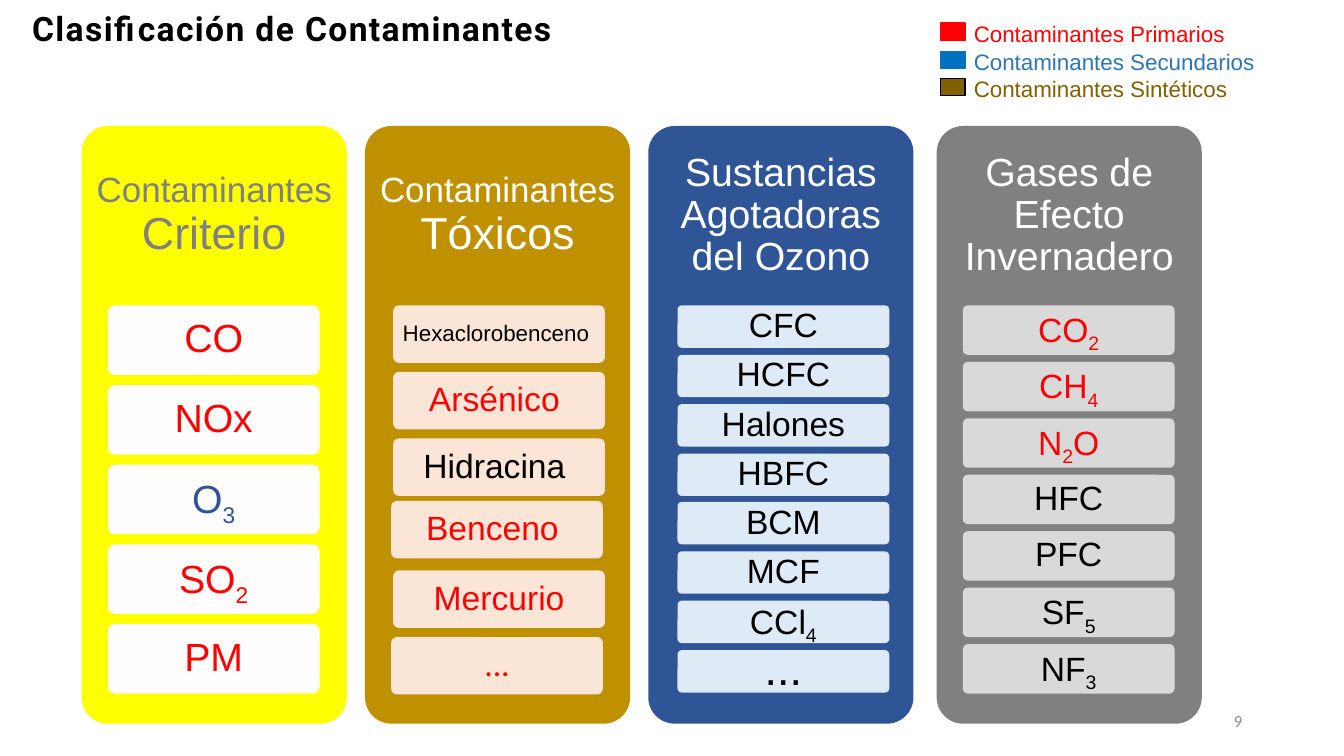
import dataclasses

import pptx
import pptx.dml.color
import pptx.enum.shapes
import pptx.enum.text
import pptx.util

PX = 9144
SHAPE = pptx.enum.shapes.MSO_SHAPE
ALIGN = pptx.enum.text.PP_ALIGN
ANCHOR = pptx.enum.text.MSO_ANCHOR


@dataclasses.dataclass(frozen=True)
class Theme:
    """Colours, fonts and type sizes of the slide."""
    body: str = "Arial"
    title: str = "Roboto"
    plain: str = "Calibri"
    red: str = "FF0000"
    black: str = "000000"
    white: str = "FFFFFF"
    grey: str = "808080"
    blue: str = "2F5597"
    page: str = "8C8C8C"
    small: int = 12
    legend: int = 16
    item: int = 24
    kind: int = 25
    large: int = 28
    huge: int = 32


T = Theme()


@dataclasses.dataclass(frozen=True)
class Item:
    """One pill: text with _ before each subscript, and its exceptions."""
    text: str
    color: str = T.black
    size: int = 0
    font: str = T.body
    dx: int = 0
    dy: int = 0


@dataclasses.dataclass(frozen=True)
class Column:
    """One panel: place, colours, heading runs and pills."""
    x: int
    fill: str
    head_color: str
    head: tuple
    indent: int
    pill_h: int
    last_y: int
    pill_fill: str
    size: int
    items: tuple


LEGEND = (
    ("Contaminantes Primarios", T.red, T.red, T.red),
    ("Contaminantes Secundarios", "2E75B6", "0070C0", "0070C0"),
    ("Contaminantes Sintéticos", "806000", "806000", T.black),
)

COLUMNS = (
    Column(81, "FFFF00", T.grey, (("Contaminantes ", T.kind), ("Criterio", T.huge)),
           26, 69, 619, "FFFDFD", T.large,
           (Item("CO", T.red), Item("NOx", T.red), Item("O_3", T.blue),
            Item("SO_2", T.red), Item("PM", T.red))),
    Column(362, "BF9000", T.white, (("Contaminantes ", T.kind), ("Tóxicos", T.huge)),
           28, 57, 632, "FBE5D6", T.item,
           (Item("Hexaclorobenceno ", size=T.legend), Item("Arsénico ", T.red),
            Item("Hidracina "), Item("Benceno ", T.red, dx=-2, dy=-3),
            Item("Mercurio", T.red), Item("...", T.red, font=T.plain, dx=-2))),
    Column(643, T.blue, T.white, (("Sustancias Agotadoras del Ozono", T.large),),
           29, 42, 645, "DEEBF7", T.item,
           (Item("CFC"), Item("HCFC"), Item("Halones"), Item("HBFC"),
            Item("BCM"), Item("MCF"), Item("CCl_4"), Item("...", size=T.huge))),
    Column(929, T.grey, T.white, (("Gases de Efecto Invernadero", T.large),),
           26, 49, 639, "D9D9D9", T.item,
           (Item("CO_2", T.red), Item("CH_4", T.red), Item("N_2O", T.red),
            Item("HFC"), Item("PFC"), Item("SF_5"), Item("NF_3"))),
)


def rgb(color):
    """Return a colour object."""
    return pptx.dml.color.RGBColor.from_string(color)


def emu(*lengths):
    """Turn px into EMU."""
    return [n * PX for n in lengths]


def style(p, font, size, color, align=ALIGN.LEFT):
    """Set the font and alignment of a paragraph."""
    p.alignment = align
    p.font.name = font
    p.font.size = pptx.util.Pt(size)
    p.font.color.rgb = rgb(color)


def frame(sp, inset_x=10, inset_y=5, anchor=ANCHOR.MIDDLE):
    """Set up a text frame and return its first paragraph."""
    tf = sp.text_frame
    tf.word_wrap = True
    tf.vertical_anchor = anchor
    tf.margin_left, tf.margin_right = emu(inset_x, inset_x)
    tf.margin_top, tf.margin_bottom = emu(inset_y, inset_y)
    return tf.paragraphs[0]


def add_box(s, kind, box, fill, line=None):
    """Add a flat filled shape."""
    sp = s.shapes.add_shape(kind, *emu(*box))
    sp.shadow.inherit = False
    sp.fill.solid()
    sp.fill.fore_color.rgb = rgb(fill)
    if line:
        sp.line.color.rgb = rgb(line)
        sp.line.width = pptx.util.Pt(1)
    else:
        sp.line.fill.background()
    if kind == SHAPE.ROUNDED_RECTANGLE:
        sp.adjustments[0] = 0.1
    return sp


def add_label(s, box, text, font, size, color, align=ALIGN.LEFT, anchor=ANCHOR.MIDDLE):
    """Add a one-line text box and return its paragraph."""
    p = frame(s.shapes.add_textbox(*emu(*box)), anchor=anchor)
    p.add_run().text = text
    style(p, font, size, color, align)
    return p


def add_title(s, box):
    """Add the spaced bold title."""
    p = add_label(s, box, "Clasificación de Contaminantes", T.title, T.item, T.black)
    p.line_spacing = 0.9
    p.font.bold = True
    p.runs[0]._r.get_or_add_rPr().set("spc", "100")


def add_legend(s, box):
    """Add the colour key, one row per kind of pollutant."""
    x, y, w, h = box
    for i, (text, color, fill, line) in enumerate(LEGEND):
        top = y + round(i * 27.5)
        add_box(s, SHAPE.RECTANGLE, (x, top + 8, 24, 17), fill, line)
        add_label(s, (x + 23, top, w - 23, 31), text, T.body, T.legend, color,
                  anchor=ANCHOR.TOP)


def add_pill(s, box, item, fill, size):
    """Add one pollutant, lowering the characters marked as subscripts."""
    sp = add_box(s, SHAPE.ROUNDED_RECTANGLE, box, fill)
    p = frame(sp, 7)
    p.line_spacing = 0.9
    style(p, item.font, item.size or size, item.color, ALIGN.CENTER)
    first, *rest = item.text.split("_")
    p.add_run().text = first
    for part in rest:
        r = p.add_run()
        r.text = part[0]
        r._r.get_or_add_rPr().set("baseline", "-25000")
        if part[1:]:
            p.add_run().text = part[1:]


def add_column(s, box, col):
    """Add a panel with its heading and evenly spaced pills."""
    x, y, w, h = box
    head_h = 178
    add_box(s, SHAPE.ROUNDED_RECTANGLE, box, col.fill)
    p = frame(s.shapes.add_textbox(*emu(x, y, w, head_h)), 10, 10)
    p.line_spacing = 0.9
    style(p, T.body, col.head[-1][1], col.head_color, ALIGN.CENTER)
    for text, size in col.head:
        r = p.add_run()
        r.text = text
        r.font.size = pptx.util.Pt(size)
    top = y + head_h
    pitch = (col.last_y - top) / (len(col.items) - 1)
    for i, item in enumerate(col.items):
        place = (x + col.indent + item.dx, top + round(i * pitch) + item.dy, 210, col.pill_h)
        add_pill(s, place, item, col.pill_fill, col.size)


def main():
    """Build the slide and save it."""
    prs = pptx.Presentation()
    prs.slide_width, prs.slide_height = emu(1333, 750)
    s = prs.slides.add_slide(prs.slide_layouts[6])
    add_legend(s, (933, 15, 342, 92))
    add_label(s, (942, 695, 300, 40), "9", T.plain, T.small, T.page, ALIGN.RIGHT)
    for col in COLUMNS:
        add_column(s, (col.x, 125, 263, 593), col)
    add_title(s, (22, 7, 818, 46))
    prs.save("out.pptx")


if __name__ == "__main__":
    main()
